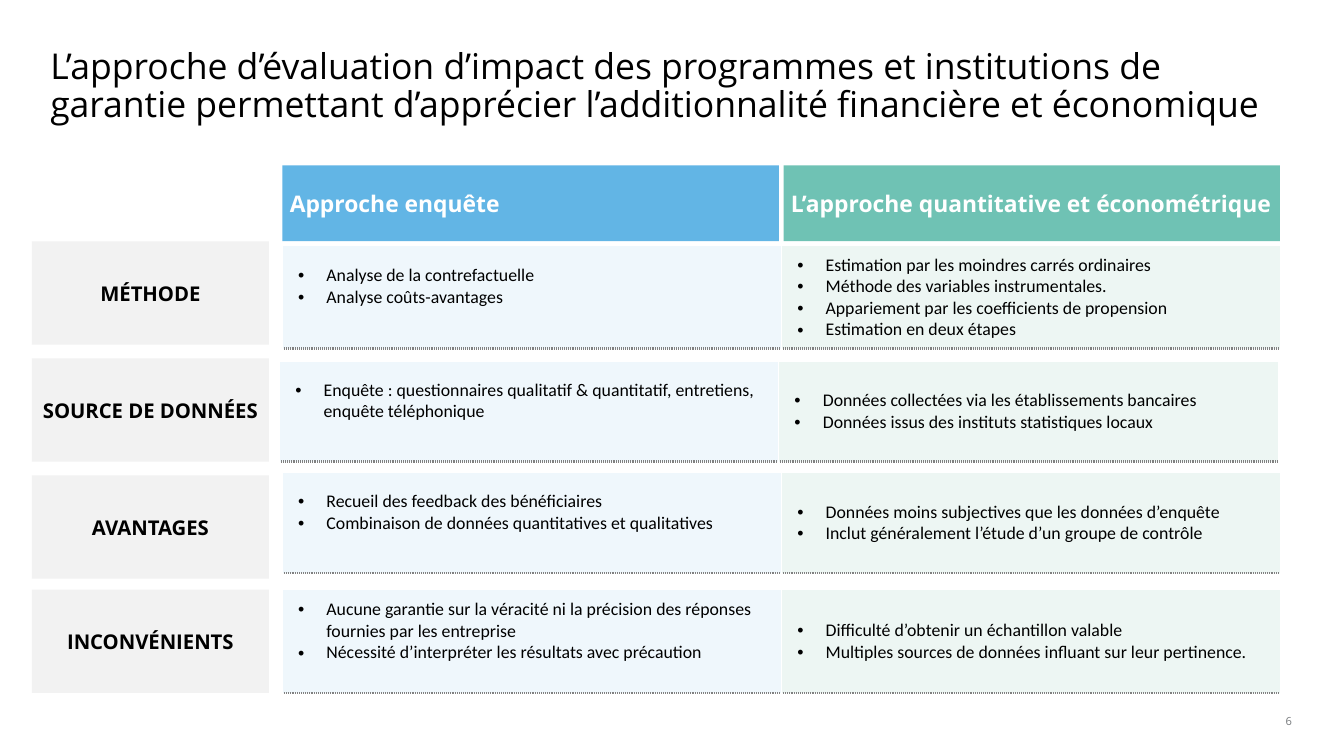
from dataclasses import dataclass

from lxml.etree import SubElement
from pptx import Presentation
from pptx.dml.color import RGBColor
from pptx.enum.shapes import MSO_SHAPE
from pptx.enum.text import MSO_ANCHOR, PP_ALIGN
from pptx.oxml import parse_xml
from pptx.oxml.ns import nsdecls, qn
from pptx.util import Inches, Pt


@dataclass(frozen=True)
class Theme:
    heading_font: str = "Open Sans"
    body_font: str = "Calibri"
    title_size: float = 28
    header_size: float = 18
    label_size: float = 16
    body_size: float = 14
    number_size: float = 8.8
    black: str = "000000"
    white: str = "FFFFFF"
    grey: str = "75787B"
    dots: str = "808080"
    label_fill: str = "F2F2F2"
    survey: str = "62B5E5"
    survey_tint: str = "E0F0FA"
    econometric: str = "6FC2B4"
    econometric_tint: str = "DDEFE8"


@dataclass(frozen=True)
class Box:
    left: float
    top: float
    width: float
    height: float

    def lengths(self) -> list:
        return [Inches(n) for n in (self.left, self.top, self.width, self.height)]


@dataclass(frozen=True)
class Approach:
    heading: str
    left: float
    color: str
    tint: str
    bottom_margin: float


@dataclass(frozen=True)
class Criterion:
    label: str
    label_top: float
    table_left: float
    table_top: float
    survey: list[str]
    econometric: list[str]


THEME = Theme()
TITLE = ("L’approche d’évaluation d’impact des programmes et institutions de garantie "
         "permettant d’apprécier l’additionnalité financière et économique")
COLUMN_WIDTH, ROW_HEIGHT = 5.46, 1.1

APPROACHES = [
    Approach("Approche enquête", 3.09, THEME.survey, THEME.survey_tint, 0.33),
    Approach("L’approche quantitative et économétrique", 8.57,
             THEME.econometric, THEME.econometric_tint, 0.1),
]

CRITERIA = [
    Criterion("MÉTHODE", 2.64, 3.09, 2.68,
              ["Analyse de la contrefactuelle", "Analyse coûts-avantages"],
              ["Estimation par les moindres carrés ordinaires",
               "Méthode des variables instrumentales.",
               "Appariement par les coefficients de propension",
               "Estimation en deux étapes"]),
    Criterion("SOURCE DE DONNÉES", 3.92, 3.06, 3.95,
              ["Enquête : questionnaires qualitatif & quantitatif, entretiens, "
               "enquête téléphonique"],
              ["Données collectées via les établissements bancaires",
               "Données issus des instituts statistiques locaux"]),
    Criterion("AVANTAGES", 5.2, 3.09, 5.17,
              ["Recueil des feedback des bénéficiaires",
               "Combinaison de données quantitatives et qualitatives"],
              ["Données moins subjectives que les données d’enquête",
               "Inclut généralement l’étude d’un groupe de contrôle"]),
    Criterion("INCONVÉNIENTS", 6.45, 3.09, 6.45,
              ["Aucune garantie sur la véracité ni la précision des réponses "
               "fournies par les entreprise",
               "Nécessité d’interpréter les résultats avec précaution"],
              ["Difficulté d’obtenir un échantillon valable",
               "Multiples sources de données influant sur leur pertinence."]),
]


def apply(target, values: dict) -> None:
    """Set each named attribute of the target."""
    for name, value in values.items():
        setattr(target, name, value)


def margins(left: float, top: float, right: float, bottom: float) -> dict:
    sides = dict(left=left, top=top, right=right, bottom=bottom)
    return {f"margin_{side}": Inches(size) for side, size in sides.items()}


def write(paragraph, text: str, size: float, color: str, font: str = THEME.heading_font,
          bold: bool = False) -> None:
    run = paragraph.add_run()
    run.text = text
    apply(run.font, {"name": font, "size": Pt(size), "bold": bold})
    run.font.color.rgb = RGBColor.from_string(color)


def add_text(slide, box: Box, text: str, size: float, color: str, top_margin: float = 0,
             **paragraph_format) -> None:
    frame = slide.shapes.add_textbox(*box.lengths()).text_frame
    apply(frame, {"word_wrap": True, **margins(0, top_margin, 0, 0)})
    apply(frame.paragraphs[0], paragraph_format)
    write(frame.paragraphs[0], text, size, color)


def add_block(slide, box: Box, text: str, fill: str, size: float, color: str,
              align: PP_ALIGN, inset: dict) -> None:
    """Add a filled rectangle with bold text centred vertically."""
    block = slide.shapes.add_shape(MSO_SHAPE.RECTANGLE, *box.lengths())
    block.shadow.inherit = False
    block.fill.solid()
    block.fill.fore_color.rgb = RGBColor.from_string(fill)
    block.line.fill.background()
    frame = block.text_frame
    apply(frame, {"word_wrap": True, "vertical_anchor": MSO_ANCHOR.MIDDLE, **inset})
    frame.paragraphs[0].alignment = align
    write(frame.paragraphs[0], text, size, color, bold=True)


def add_bullet(paragraph, text: str) -> None:
    properties = paragraph._p.get_or_add_pPr()
    properties.set("marL", str(Inches(0.43)))
    properties.set("indent", str(Inches(-0.31)))
    SubElement(properties, qn("a:buFont"), typeface="Arial")
    SubElement(properties, qn("a:buChar"), char="•")
    write(paragraph, text, THEME.body_size, THEME.black, THEME.body_font)


def style_cell(cell, tint: str) -> None:
    """Give the cell a half-transparent fill, white sides and a dotted base."""
    cell.fill.solid()
    cell.fill.fore_color.rgb = RGBColor.from_string(tint)
    properties = cell._tc.get_or_add_tcPr()
    SubElement(properties.find(".//" + qn("a:srgbClr")), qn("a:alpha"), val="50000")
    borders = [("lnL", THEME.white, 1, "solid"), ("lnR", THEME.white, 1, "solid"),
               ("lnB", THEME.dots, 2.25, "sysDot")]
    for position, (side, color, width, dash) in enumerate(borders):
        properties.insert(position, parse_xml(
            f'<a:{side} {nsdecls("a")} w="{Pt(width)}"><a:solidFill>'
            f'<a:srgbClr val="{color}"/></a:solidFill><a:prstDash val="{dash}"/></a:{side}>'))


def add_criterion(slide, criterion: Criterion) -> None:
    add_block(slide, Box(0.35, criterion.label_top, 2.59, 1.13), criterion.label,
              THEME.label_fill, THEME.label_size, THEME.black, PP_ALIGN.CENTER,
              margins(0.1, 0.1, 0.1, 0.1))
    box = Box(criterion.table_left, criterion.table_top, 2 * COLUMN_WIDTH, ROW_HEIGHT)
    table = slide.shapes.add_table(1, 2, *box.lengths()).table
    apply(table, {"first_row": False, "horz_banding": False})
    answers = (criterion.survey, criterion.econometric)
    for column, (approach, points) in enumerate(zip(APPROACHES, answers)):
        cell = table.cell(0, column)
        apply(cell, {"vertical_anchor": MSO_ANCHOR.MIDDLE,
                     **margins(0.05, 0.1, 0.05, approach.bottom_margin)})
        style_cell(cell, approach.tint)
        frame = cell.text_frame
        for index, point in enumerate(points):
            add_bullet(frame.add_paragraph() if index else frame.paragraphs[0], point)


def main() -> None:
    presentation = Presentation()
    apply(presentation, {"slide_width": Inches(14.7), "slide_height": Inches(8.27)})
    slide = presentation.slides.add_slide(presentation.slide_layouts[6])
    add_text(slide, Box(0.55, 0.5, 13.6, 1.48), TITLE, THEME.title_size, THEME.black,
             top_margin=0.05, line_spacing=0.87)
    for approach in APPROACHES:
        add_block(slide, Box(approach.left, 1.81, 5.43, 0.83), approach.heading,
                  approach.color, THEME.header_size, THEME.white, PP_ALIGN.LEFT,
                  margins(0.08, 0, 0, 0))
    for criterion in CRITERIA:
        add_criterion(slide, criterion)
    add_text(slide, Box(13.76, 7.81, 0.37, 0.15), "6", THEME.number_size, THEME.grey,
             alignment=PP_ALIGN.RIGHT)
    presentation.save("out.pptx")


if __name__ == "__main__":
    main()
